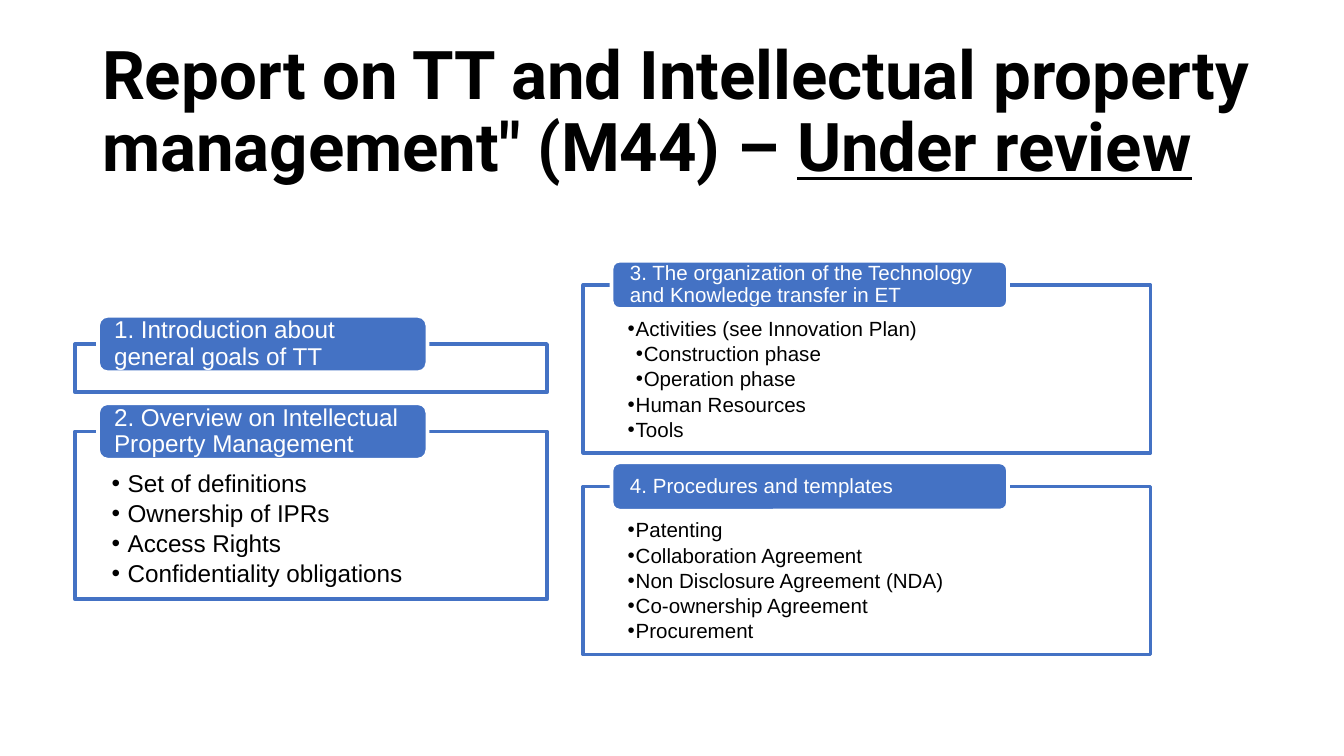
import pptx
import pptx.util
import pptx.dml.color
import pptx.enum.shapes
import pptx.enum.text
import pptx.oxml.ns
import lxml.etree

Inches = pptx.util.Inches
Pt = pptx.util.Pt
SHAPES = pptx.enum.shapes.MSO_SHAPE
ANCHOR = pptx.enum.text.MSO_ANCHOR
ALIGN = pptx.enum.text.PP_ALIGN
qn = pptx.oxml.ns.qn

BLUE, WHITE, BLACK = "4472C4", "FFFFFF", "000000"

TITLE = [
    ('Report on TT and Intellectual property management" (M44) – ', False),
    ("Under review", True),
]

COLUMNS = [
    {
        "left": 4.34, "width": 4.22, "size": 11, "indent": 0.06,
        "heading_left": 4.55, "heading_width": 2.95, "heading_height": 0.36,
        "heading_rise": 0.18, "heading_inset": 0.12,
        "body_insets": (0.33, 0.25),
        "sections": [
            ("3. The organization of the Technology and Knowledge transfer in ET", 2.12, 1.25, [
                ("Activities (see Innovation Plan)", 0),
                ("Construction phase", 1),
                ("Operation phase", 1),
                ("Human Resources", 0),
                ("Tools", 0),
            ]),
            ("4. Procedures and templates", 3.62, 1.25, [
                ("Patenting", 0),
                ("Collaboration Agreement", 0),
                ("Non Disclosure Agreement (NDA)", 0),
                ("Co-ownership Agreement", 0),
                ("Procurement", 0),
            ]),
        ],
    },
    {
        "left": 0.56, "width": 3.51, "size": 13, "indent": 0.12,
        "heading_left": 0.73, "heading_width": 2.45, "heading_height": 0.42,
        "heading_rise": 0.21, "heading_inset": 0.1,
        "body_insets": (0.27, 0.3),
        "sections": [
            ("1. Introduction about general goals of TT", 2.56, 0.36, []),
            ("2. Overview on Intellectual Property Management", 3.21, 1.25, [
                ("Set of definitions", 0),
                ("Ownership of IPRs", 0),
                ("Access Rights", 0),
                ("Confidentiality obligations", 0),
            ]),
        ],
    },
]


def color(value):
    return pptx.dml.color.RGBColor.from_string(value)


def apply(target, formats):
    for name, value in formats.items():
        setattr(target, name, value)


def format_frame(frame, insets, anchor):
    left, top, right, bottom = map(Inches, insets)
    apply(frame, {
        "word_wrap": True, "vertical_anchor": anchor,
        "margin_left": left, "margin_top": top,
        "margin_right": right, "margin_bottom": bottom,
    })


def add_run(paragraph, text, text_color, **formats):
    run = paragraph.add_run()
    run.text = text
    apply(run.font, formats)
    run.font.color.rgb = color(text_color)


def add_box(slide, preset, area, fill, line):
    box = slide.shapes.add_shape(preset, *map(Inches, area))
    box.shadow.inherit = False
    box.fill.solid()
    box.fill.fore_color.rgb = color(fill)
    box.line.color.rgb = color(line)
    box.line.width = Pt(2)
    return box


def add_bullet(paragraph, indent, level):
    properties = paragraph._p.get_or_add_pPr()
    properties.set("marL", str(Inches(indent * (level + 1))))
    properties.set("indent", str(-Inches(indent)))
    bullet_color = lxml.etree.SubElement(properties, qn("a:buClr"))
    lxml.etree.SubElement(bullet_color, qn("a:srgbClr"), val=BLACK)
    lxml.etree.SubElement(properties, qn("a:buFont"), typeface="Arial")
    lxml.etree.SubElement(properties, qn("a:buChar"), char="•")


def add_section(slide, column, heading, top, height, items):
    size = column["size"]
    text_format = {"size": Pt(size), "name": "Arial"}
    body = add_box(slide, SHAPES.RECTANGLE,
                   (column["left"], top, column["width"], height), WHITE, BLUE)
    side, above = column["body_insets"]
    if items:
        format_frame(body.text_frame, (side, above, side, 0.09), ANCHOR.TOP)
    for index, (item, level) in enumerate(items):
        frame = body.text_frame
        paragraph = frame.add_paragraph() if index else frame.paragraphs[0]
        add_bullet(paragraph, column["indent"], level)
        apply(paragraph, {"alignment": ALIGN.LEFT, "level": level,
                          "line_spacing": 0.9, "space_after": Pt(size * 0.15)})
        add_run(paragraph, item, BLACK, **text_format)

    label = add_box(slide, SHAPES.ROUNDED_RECTANGLE,
                    (column["heading_left"], top - column["heading_rise"],
                     column["heading_width"], column["heading_height"]), BLUE, WHITE)
    inset = column["heading_inset"]
    format_frame(label.text_frame, (inset, 0, inset, 0), ANCHOR.MIDDLE)
    paragraph = label.text_frame.paragraphs[0]
    apply(paragraph, {"alignment": ALIGN.LEFT, "line_spacing": 0.9})
    add_run(paragraph, heading, WHITE, **text_format)


def main():
    deck = pptx.Presentation()
    apply(deck, {"slide_width": Inches(10), "slide_height": Inches(10 * 9 / 16)})
    slide = deck.slides.add_slide(deck.slide_layouts[6])

    title = slide.shapes.add_textbox(*map(Inches, (0.69, 0.3, 8.83, 1.09)))
    format_frame(title.text_frame, (0.07, 0.04, 0.07, 0.04), ANCHOR.MIDDLE)
    paragraph = title.text_frame.paragraphs[0]
    paragraph.line_spacing = 0.9
    for text, underline in TITLE:
        add_run(paragraph, text, BLACK, size=Pt(36), name="Roboto",
                bold=True, underline=underline)

    for column in COLUMNS:
        for section in column["sections"]:
            add_section(slide, column, *section)

    deck.save("out.pptx")


if __name__ == "__main__":
    main()
